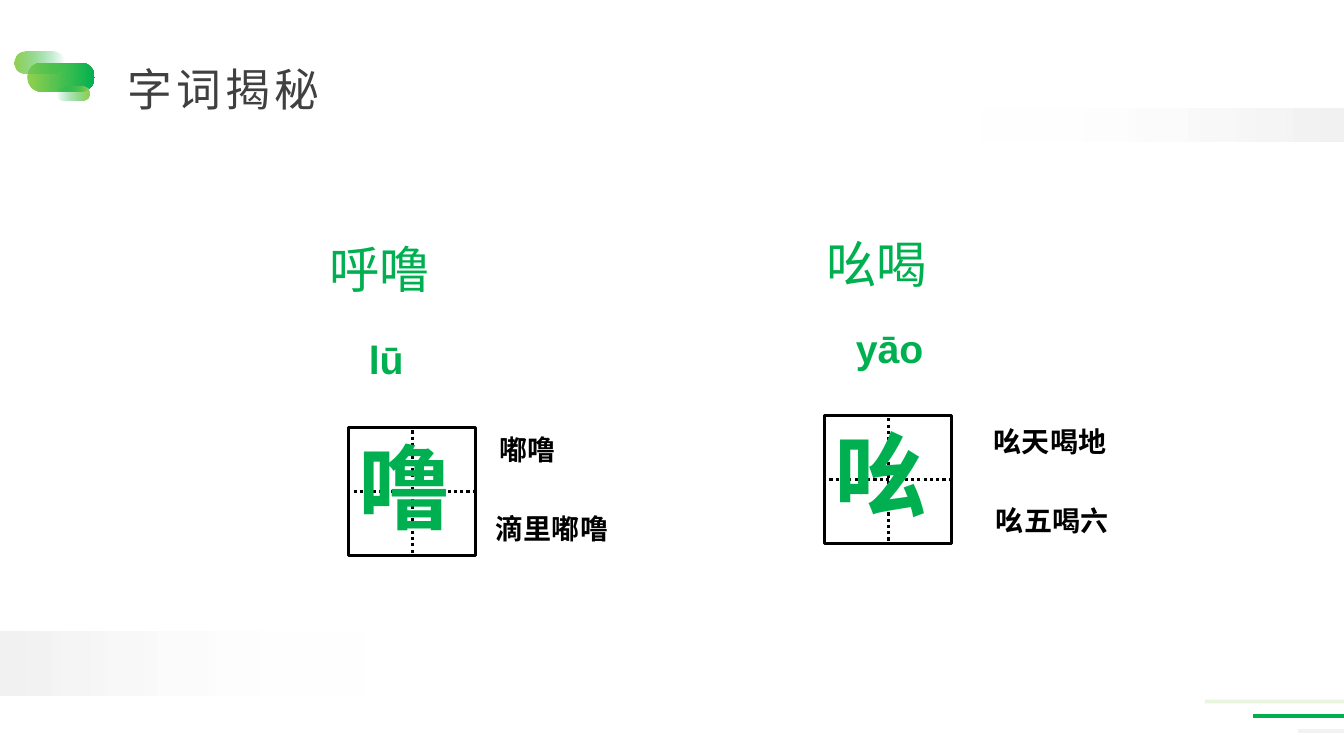
from pptx import Presentation
from pptx.dml.color import RGBColor
from pptx.enum.dml import MSO_LINE
from pptx.enum.shapes import MSO_CONNECTOR, MSO_SHAPE
from pptx.enum.text import MSO_AUTO_SIZE
from pptx.oxml.ns import qn
from pptx.util import Pt
from lxml.etree import SubElement

PX = 9144  # 100 px to the inch
LIME = RGBColor(0x92, 0xD0, 0x50)
GREEN = RGBColor(0x00, 0xB0, 0x50)
PALE = RGBColor(0xF2, 0xF2, 0xF2)
WHITE = RGBColor(0xFF, 0xFF, 0xFF)
GREY = RGBColor(0x40, 0x40, 0x40)
BLACK = RGBColor(0x00, 0x00, 0x00)


def emu(*vals):
    return [val * PX for val in vals]


def add_alpha(color, pct):
    SubElement(color, qn("a:alpha")).set("val", str(pct * 1000))


def add_line(shapes, ends, color, width, dash=None, alpha=None):
    line = shapes.add_connector(MSO_CONNECTOR.STRAIGHT, *emu(*ends))
    line.line.color.rgb = color
    line.line.width = Pt(width)
    if dash:
        line.line.dash_style = dash
    props = line.element.spPr
    if alpha is not None:
        add_alpha(next(props.iter(qn("a:srgbClr"))), alpha)
    SubElement(props, qn("a:effectLst"))
    return line


def add_fade(shapes, kind, box, start, end, clear=True, flip=False):
    shape = shapes.add_shape(kind, *emu(*box))
    shape.shadow.inherit = False
    shape.line.fill.background()
    if kind == MSO_SHAPE.ROUNDED_RECTANGLE:
        shape.adjustments[0] = 0.5
    shape.fill.gradient()
    shape.fill.gradient_angle = 0
    for stop, color in zip(shape.fill.gradient_stops, (start, end)):
        stop.color.rgb = color
    props = shape.element.spPr
    if clear:
        add_alpha(list(props.iter(qn("a:srgbClr")))[-1], 0)
    if flip:
        props.find(qn("a:xfrm")).set("flipH", "1")


def add_text(shapes, box, text, size, color, bold=False, font="Arial"):
    frame = shapes.add_textbox(*emu(*box)).text_frame
    frame.word_wrap = True
    frame.auto_size = MSO_AUTO_SIZE.SHAPE_TO_FIT_TEXT
    para = frame.paragraphs[0]
    run = para.add_run()
    run.text = text
    run.font.size = Pt(size)
    run.font.bold = bold
    run.font.name = font
    run.font.color.rgb = color
    return para


def add_decor(shapes, wide, high):
    # Corner lines, running off the right edge
    for left, rise, color, alpha in ((1195, 54, LIME, 20),
                                     (1243, 40, GREEN, None),
                                     (1287, 25, PALE, None)):
        add_line(shapes, (left, high - rise, wide, high - rise),
                 color, 2.75, alpha=alpha)
    # Pale bands at both edges
    add_fade(shapes, MSO_SHAPE.RECTANGLE, (0, 627, 362, 63), PALE, WHITE)
    add_fade(shapes, MSO_SHAPE.RECTANGLE, (wide - 362, 108, 362, 32),
             PALE, WHITE, flip=True)


def add_title(shapes, left, top, text):
    # Three overlapping pills
    for x, y, w, h, clear, flip in ((13, 11, 67, 29, False, False),
                                    (0, 0, 50, 22, True, False),
                                    (42, 35, 33, 14, True, True)):
        add_fade(shapes, MSO_SHAPE.ROUNDED_RECTANGLE,
                 (left + x, top + y, w, h), LIME, GREEN, clear, flip)
    # Heading
    para = add_text(shapes, (left + 103, top - 21, 278, 84), text, 32, GREY,
                    font="Lato")
    para.line_spacing = 1.5
    para.runs[0].font.element.set("spc", "300") if hasattr(
        para.runs[0].font, "element") else para.runs[0]._r.rPr.set("spc", "300")


def add_cell(shapes, left, top, wide, high):
    # Writing square with dotted guides
    parts = shapes.add_group_shape().shapes
    square = parts.add_shape(MSO_SHAPE.RECTANGLE, *emu(left, top, wide, high))
    square.shadow.inherit = False
    square.fill.background()
    square.line.color.rgb = BLACK
    square.line.width = Pt(2.25)
    midx, midy = left + wide // 2, top + high // 2
    across = add_line(parts, (left + wide, midy, left, midy),
                      BLACK, 2.25, MSO_LINE.ROUND_DOT)
    across.begin_connect(square, 3)
    across.end_connect(square, 1)
    down = add_line(parts, (midx, top + 3, midx, top + high),
                    BLACK, 2.25, MSO_LINE.ROUND_DOT)
    down.end_connect(square, 2)


def add_word(shapes, left, top, char, word, sound, phrases):
    """Place one word around its writing square at left, top."""
    add_cell(shapes, left, top, 126, 127)
    add_text(shapes, (left, top - 2, 126, 121), char, 66, GREEN, True)
    for (text, x, y, w, h), size, bold in ((word, 36, False),
                                           (sound, 28, True)):
        add_text(shapes, (left + x, top + y, w, h), text, size, GREEN, bold)
    for text, x, y, w in phrases:
        add_text(shapes, (left + x, top + y, w, 44), text, 20, BLACK, True)


def main():
    deck = Presentation()
    wide, high = 1333, 750
    deck.slide_width, deck.slide_height = emu(wide, high)
    shapes = deck.slides.add_slide(deck.slide_layouts[6]).shapes
    add_decor(shapes, wide, high)
    add_title(shapes, 14, 51, "字词揭秘")
    add_word(shapes, 346, 424, "噜",
             ("呼噜", -29, -193, 239, 71), ("lū", 10, -96, 108, 57),
             (("嘟噜", 140, 0, 240), ("滴里嘟噜", 136, 79, 240)))
    add_word(shapes, 818, 412, "吆",
             ("吆喝", -8, -186, 297, 71), ("yāo", 21, -95, 106, 57),
             (("吆天喝地", 158, 4, 225), ("吆五喝六", 160, 83, 222)))
    deck.save("out.pptx")


if __name__ == "__main__":
    main()
